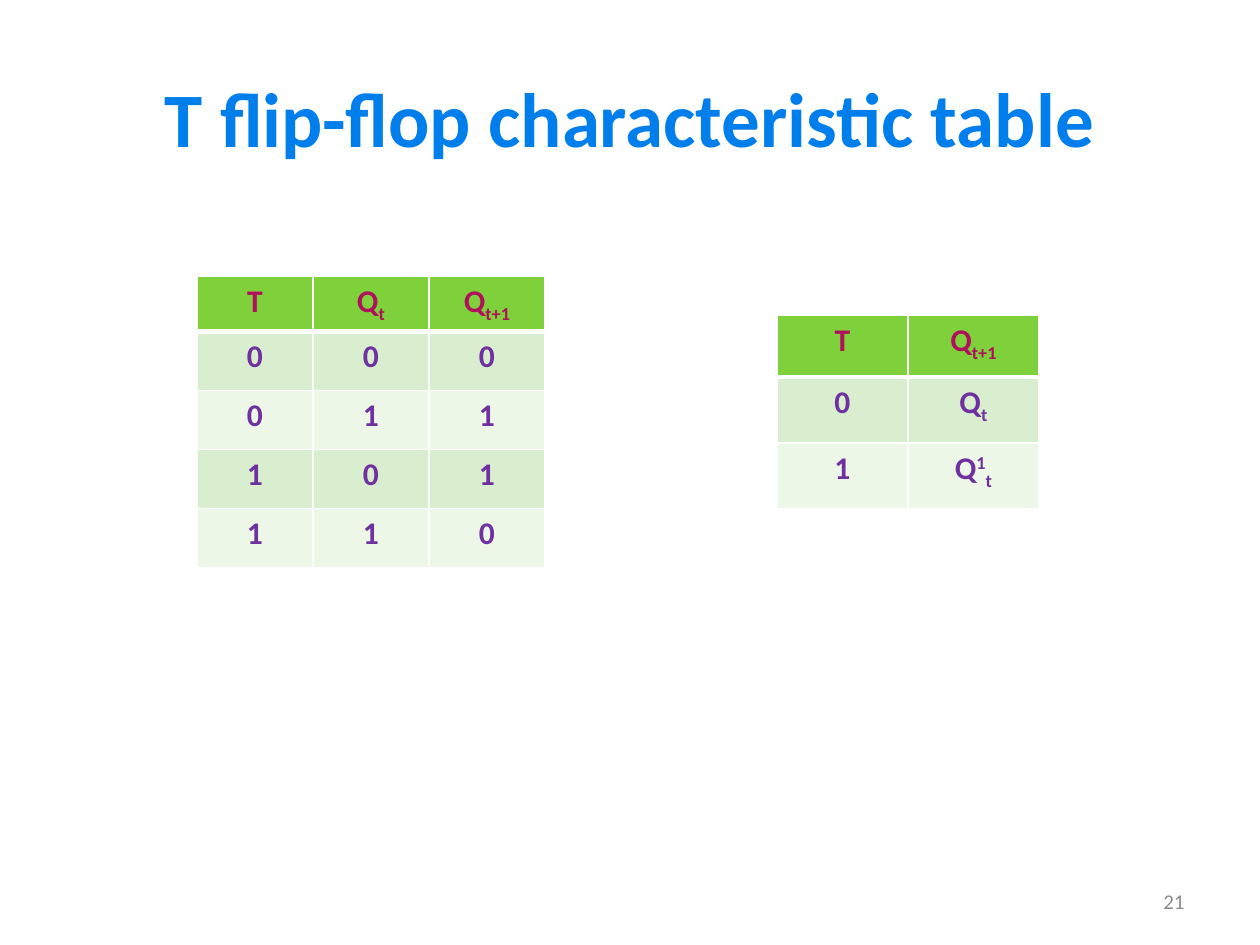
from lxml.etree import SubElement
from pptx import Presentation
from pptx.dml.color import RGBColor
from pptx.enum.text import MSO_ANCHOR, PP_ALIGN
from pptx.oxml.ns import qn
from pptx.util import Emu, Pt

PX_PER_INCH = 126
FONT = "Calibri"
BLUE = RGBColor(0x00, 0x7E, 0xEB)
GRAY = RGBColor(0x8C, 0x8C, 0x8C)
CRIMSON = RGBColor(0xB0, 0x10, 0x5C)
PURPLE = RGBColor(0x70, 0x30, 0xA0)
GREEN = RGBColor(0x7F, 0xD1, 0x3B)
BANDS = (RGBColor(0xD8, 0xEE, 0xCE), RGBColor(0xEC, 0xF7, 0xE8))
WHITE = RGBColor(0xFF, 0xFF, 0xFF)

SUBSCRIPT = -25000
SUPERSCRIPT = 30000
STATE = (("Q", 0), ("t", SUBSCRIPT))
NEXT_STATE = (("Q", 0), ("t+1", SUBSCRIPT))
TOGGLED_STATE = (("Q", 0), ("1", SUPERSCRIPT), ("t", SUBSCRIPT))


def px(length):
    return Emu(round(length * 914400 / PX_PER_INCH))


def add_span(para, text, size, color, bold=False, baseline=0):
    span = para.add_run()
    span.text = text
    span.font.name = FONT
    span.font.size = Pt(size)
    span.font.bold = bold
    span.font.color.rgb = color
    if baseline:
        span._r.get_or_add_rPr().set("baseline", str(baseline))


def add_label(page, box, text, size, color, align, bold=False):
    frame = page.shapes.add_textbox(*map(px, box)).text_frame
    frame.word_wrap = True
    frame.vertical_anchor = MSO_ANCHOR.MIDDLE
    para = frame.paragraphs[0]
    para.alignment = align
    add_span(para, text, size, color, bold)


def set_borders(cell, top, bottom):
    properties = cell._tc.get_or_add_tcPr()
    for side, width in (("L", 1), ("R", 1), ("T", top), ("B", bottom)):
        line = SubElement(properties, qn(f"a:ln{side}"), w=str(Pt(width)))
        fill = SubElement(line, qn("a:solidFill"))
        SubElement(fill, qn("a:srgbClr"), val=str(WHITE))


def add_truth_table(page, box, header_height, rows):
    frame = page.shapes.add_table(len(rows), len(rows[0]), *map(px, box))
    table = frame.table
    table.first_row = False
    table.horz_banding = False
    body_height = (box[3] - header_height) // (len(rows) - 1)
    for column in table.columns:
        column.width = px(box[2] // len(rows[0]))
    for index, values in enumerate(rows):
        header = index == 0
        table.rows[index].height = px(header_height if header else body_height)
        for cell, value in zip(table.rows[index].cells, values):
            set_borders(cell, 3 if index == 1 else 1, 3 if header else 1)
            cell.fill.solid()
            cell.fill.fore_color.rgb = GREEN if header else BANDS[(index - 1) % 2]
            para = cell.text_frame.paragraphs[0]
            para.alignment = PP_ALIGN.CENTER
            spans = ((value, 0),) if isinstance(value, str) else value
            for text, baseline in spans:
                add_span(para, text, 18, CRIMSON if header else PURPLE, True, baseline)


def main():
    deck = Presentation()
    deck.slide_width, deck.slide_height = px(1260), px(945)
    page = deck.slides.add_slide(deck.slide_layouts[6])
    add_label(page, (63, 38, 1134, 158), "T flip-flop characteristic table",
              44, BLUE, PP_ALIGN.CENTER, True)
    add_label(page, (903, 876, 294, 50), "21", 12, GRAY, PP_ALIGN.RIGHT)
    add_truth_table(page, (197, 276, 348, 290), 54, (
        ("T", STATE, NEXT_STATE),
        ("0", "0", "0"),
        ("0", "1", "1"),
        ("1", "0", "1"),
        ("1", "1", "0"),
    ))
    add_truth_table(page, (777, 315, 262, 194), 62, (
        ("T", NEXT_STATE),
        ("0", STATE),
        ("1", TOGGLED_STATE),
    ))
    deck.save("out.pptx")


if __name__ == "__main__":
    main()
